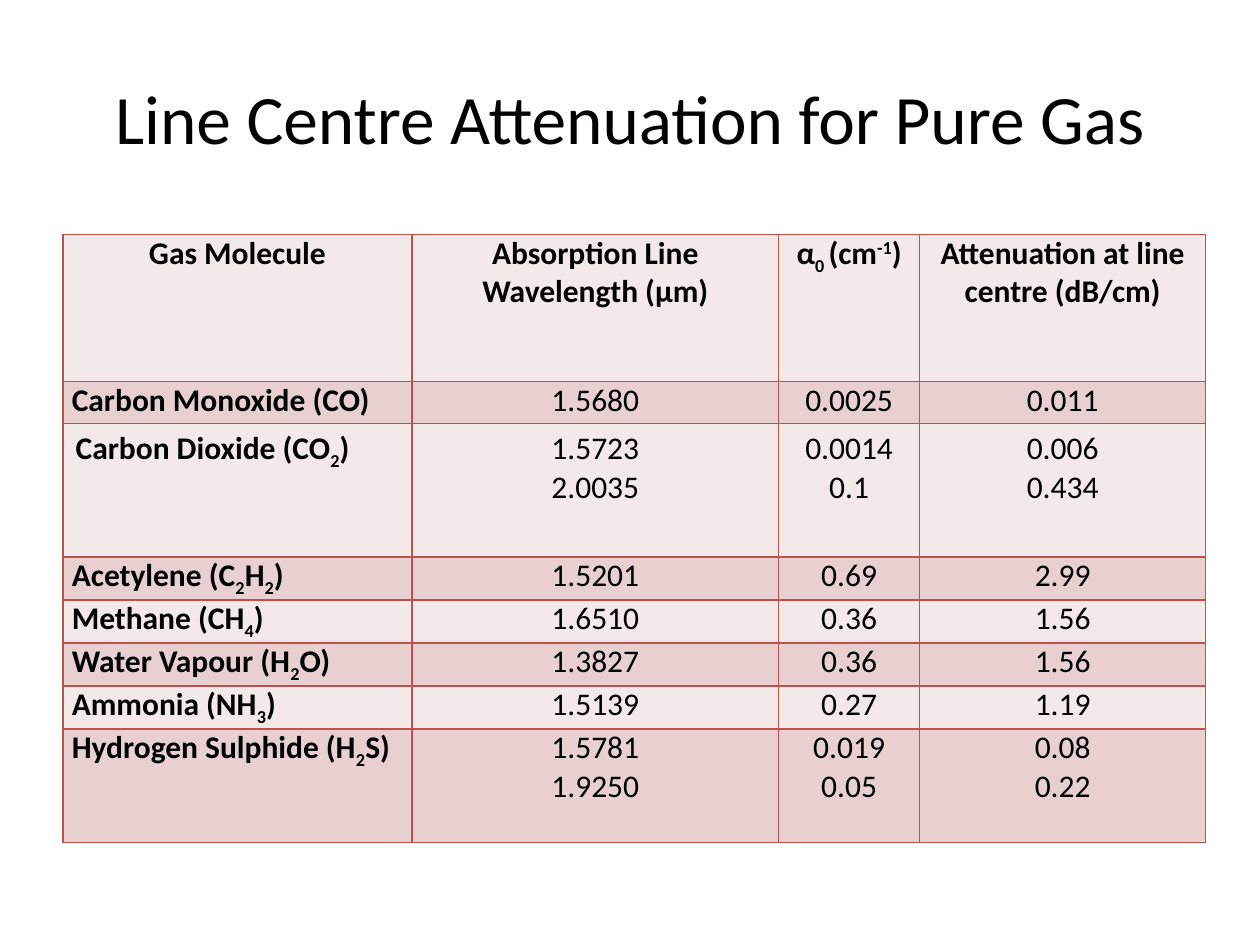
import pptx
import pptx.dml.color
import pptx.enum.text
import pptx.oxml
import pptx.oxml.ns
import pptx.util

RGB = pptx.dml.color.RGBColor
ALIGN = pptx.enum.text.PP_ALIGN
MIDDLE = pptx.enum.text.MSO_ANCHOR.MIDDLE
Inches, Pt = pptx.util.Inches, pptx.util.Pt

BLACK = RGB(0x00, 0x00, 0x00)
LIGHT = RGB(0xF4, 0xE9, 0xE9)
DARK = RGB(0xE8, 0xD0, 0xD0)
BORDER = RGB(0xC0, 0x50, 0x4D)
FONT = "Calibri"

TITLE = "Line Centre Attenuation for Pure Gas"
# "|" separates runs; a leading "_" lowers a run and "^" raises it.
HEADER = ["Gas Molecule", "Absorption Line Wavelength (µm)",
          "α|_0 |(cm|^-1|)", "Attenuation at line centre (dB/cm)"]
GASES = [
    ["Carbon Monoxide (CO)", "1.5680", "0.0025", "0.011"],
    ["Carbon Dioxide (CO|_2|)", "1.5723\n2.0035", "0.0014\n0.1", "0.006\n0.434"],
    ["Acetylene (C|_2|H|_2|)", "1.5201", "0.69", "2.99"],
    ["Methane (CH|_4|)", "1.6510", "0.36", "1.56"],
    ["Water Vapour (H|_2|O)", "1.3827", "0.36", "1.56"],
    ["Ammonia (NH|_3|)", "1.5139", "0.27", "1.19"],
    ["Hydrogen Sulphide (H|_2|S)", "1.5781\n1.9250", "0.019\n0.05", "0.08\n0.22"],
]
COL_WIDTHS = [2.77, 2.91, 1.12, 2.27]
SINGLE = 0.33
ROW_HEIGHTS = [1.17, SINGLE, 1.06, SINGLE, SINGLE, SINGLE, SINGLE, 0.9]
ROOMY_ROW = 2
TIGHT_MARGINS = {"margin_left": 0.07, "margin_top": 0,
                 "margin_right": 0.07, "margin_bottom": 0}
ROOMY_MARGINS = {"margin_left": 0.1, "margin_top": 0.05,
                 "margin_right": 0.1, "margin_bottom": 0.05}
BASELINES = {"_": "-25000", "^": "30000"}


def set_attrs(target, values):
    for name, value in values.items():
        setattr(target, name, value)


def write_paragraph(p, text, size, bold, align, space_after=0):
    set_attrs(p, {"alignment": align, "space_after": Pt(space_after)})
    for part in text.split("|"):
        r = p.add_run()
        baseline = BASELINES.get(part[0])
        r.text = part[1:] if baseline else part
        set_attrs(r.font, {"name": FONT, "size": Pt(size), "bold": bold})
        r.font.color.rgb = BLACK
        if baseline:
            r.font._element.set("baseline", baseline)


def add_borders(cell):
    """Draw all four sides; the lines must precede the fill in the XML."""
    props = cell._tc.get_or_add_tcPr()
    for i, side in enumerate(("lnL", "lnR", "lnT", "lnB")):
        props.insert(i, pptx.oxml.parse_xml(
            f'<a:{side} {pptx.oxml.ns.nsdecls("a")} w="{Pt(1)}"><a:solidFill>'
            f'<a:srgbClr val="{BORDER}"/></a:solidFill></a:{side}>'))


def add_title(s):
    tf = s.shapes.add_textbox(Inches(0.5), Inches(0.3), Inches(9), Inches(1.25)).text_frame
    set_attrs(tf, {"word_wrap": True, "vertical_anchor": MIDDLE})
    write_paragraph(tf.paragraphs[0], TITLE, 39.6, False, ALIGN.CENTER)


def add_gas_table(s):
    rows = [HEADER] + GASES
    table = s.shapes.add_table(
        len(rows), len(HEADER), Inches(0.5), Inches(1.86),
        Inches(sum(COL_WIDTHS)), Inches(sum(ROW_HEIGHTS))).table
    for column, width in zip(table.columns, COL_WIDTHS):
        column.width = Inches(width)
    for i, values in enumerate(rows):
        table.rows[i].height = Inches(ROW_HEIGHTS[i])
        margins = ROOMY_MARGINS if i == ROOMY_ROW else TIGHT_MARGINS
        space_after = 10 if ROW_HEIGHTS[i] == SINGLE else 0
        for j, text in enumerate(values):
            cell = table.cell(i, j)
            set_attrs(cell, {name: Inches(v) for name, v in margins.items()})
            cell.fill.solid()
            cell.fill.fore_color.rgb = DARK if i % 2 else LIGHT
            add_borders(cell)
            align = ALIGN.LEFT if i and j == 0 else ALIGN.CENTER
            tf = cell.text_frame
            for k, line in enumerate(text.split("\n")):
                p = tf.add_paragraph() if k else tf.paragraphs[0]
                write_paragraph(p, line, 18, i == 0 or j == 0, align, space_after)


def main():
    prs = pptx.Presentation()
    set_attrs(prs, {"slide_width": Inches(10), "slide_height": Inches(7.5)})
    s = prs.slides.add_slide(prs.slide_layouts[6])
    add_title(s)
    add_gas_table(s)
    prs.save("out.pptx")


if __name__ == "__main__":
    main()
